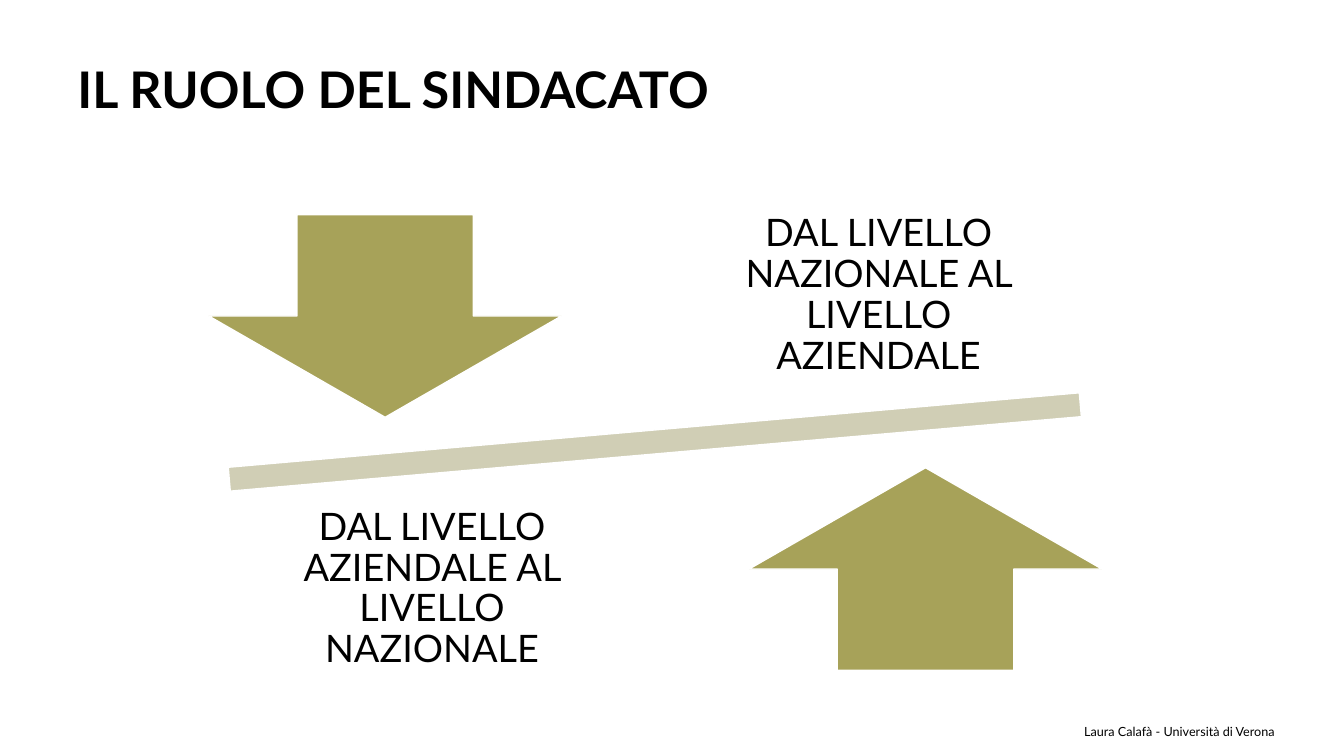
from pptx import Presentation
from pptx.dml.color import RGBColor
from pptx.enum.shapes import MSO_SHAPE
from pptx.enum.text import MSO_ANCHOR, PP_ALIGN
from pptx.util import Inches, Pt

DOWN, UP, MINUS = MSO_SHAPE.DOWN_ARROW, MSO_SHAPE.UP_ARROW, MSO_SHAPE.MATH_MINUS
TOP, MIDDLE = MSO_ANCHOR.TOP, MSO_ANCHOR.MIDDLE
LEFT, CENTER, RIGHT = PP_ALIGN.LEFT, PP_ALIGN.CENTER, PP_ALIGN.RIGHT

BLACK = RGBColor(0x00, 0x00, 0x00)
WHITE = RGBColor(0xFF, 0xFF, 0xFF)
OLIVE = RGBColor(0xA7, 0xA2, 0x59)
SAND = RGBColor(0xD0, 0xCE, 0xB5)
FONT = "Lato"


def add_text(slide, box, text, size, align, anchor, bold=False, inset=None, lead=0.9):
    area = slide.shapes.add_textbox(*map(Inches, box))
    frame = area.text_frame
    frame.word_wrap = True
    frame.vertical_anchor = anchor
    if inset is not None:
        frame.margin_left = frame.margin_right = Inches(inset)
        frame.margin_top = frame.margin_bottom = Inches(inset)
    line = frame.paragraphs[0]
    line.text = text
    line.alignment = align
    line.line_spacing = lead
    line.font.name = FONT
    line.font.size = Pt(size)
    line.font.bold = bold
    line.font.color.rgb = BLACK


def add_form(slide, kind, box, color, turn=0):
    form = slide.shapes.add_shape(kind, *map(Inches, box))
    form.shadow.inherit = False
    form.fill.solid()
    form.fill.fore_color.rgb = color
    form.line.color.rgb = WHITE
    form.line.width = Pt(1)
    form.rotation = turn


def add_title(slide, box):
    add_text(slide, box, "IL RUOLO DEL SINDACATO", 36, LEFT, TOP, bold=True)


def add_balance(slide, box):
    left, top, width, height = box
    add_form(slide, MINUS, (left, top + 2, width, 1.01), SAND, 355)
    wide, tall = 3.5, 2.01
    note_wide, note_tall = 3.73, 2.11
    sides = (
        (DOWN, 1.34, 0.25, "DAL LIVELLO AZIENDALE AL LIVELLO NAZIONALE",
         1.69, height - note_tall),
        (UP, width - 1.33 - wide, height - 0.25 - tall,
         "DAL LIVELLO NAZIONALE AL LIVELLO AZIENDALE",
         width - 1.68 - note_wide, 0),
    )
    for kind, x, y, text, note_x, note_y in sides:
        add_form(slide, kind, (left + x, top + y, wide, tall), OLIVE)
        add_text(slide, (left + note_x, top + note_y, note_wide, note_tall),
                 text, 27, CENTER, MIDDLE, inset=0.21)


def add_footer(slide, box):
    add_text(slide, box, "Laura Calafà - Università di Verona", 9, RIGHT, MIDDLE, lead=1.0)


def main():
    deck = Presentation()
    deck.slide_width = Inches(13.33)
    deck.slide_height = Inches(7.5)
    slide = deck.slides.add_slide(deck.slide_layouts[6])
    add_title(slide, (0.67, 0.6, 11.65, 1.24))
    add_balance(slide, (0.73, 1.88, 11.53, 5.02))
    add_footer(slide, (9.71, 7.06, 3.03, 0.4))
    deck.save("out.pptx")


if __name__ == "__main__":
    main()
